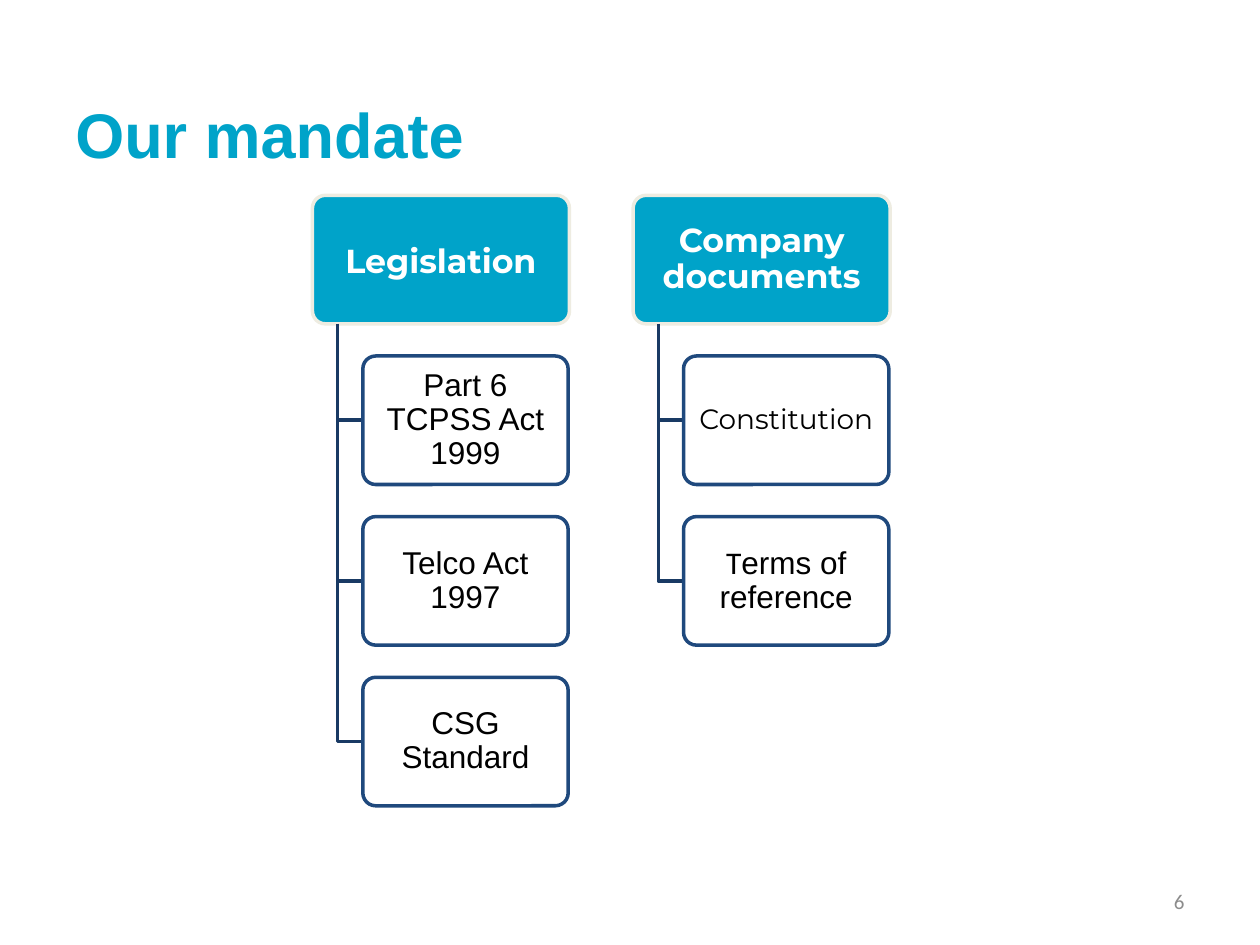
"""Build the mandate slide with two columns of linked boxes."""
from pptx import Presentation
from pptx.dml.color import RGBColor
from pptx.enum.shapes import MSO_SHAPE
from pptx.enum.text import MSO_ANCHOR, PP_ALIGN
from pptx.util import Inches, Pt

ROUND = MSO_SHAPE.ROUNDED_RECTANGLE
MIDDLE = MSO_ANCHOR.MIDDLE
LEFT, CENTER, RIGHT = PP_ALIGN.LEFT, PP_ALIGN.CENTER, PP_ALIGN.RIGHT
TEAL = RGBColor(0x00, 0xA3, 0xC9)
CREAM = RGBColor(0xEE, 0xEC, 0xE1)
NAVY = RGBColor(0x1F, 0x49, 0x7D)
DARK = RGBColor(0x19, 0x3A, 0x64)
GRAY = RGBColor(0x8C, 0x8C, 0x8C)
WHITE = RGBColor(0xFF, 0xFF, 0xFF)
BLACK = RGBColor(0x00, 0x00, 0x00)

TITLE = [("Our mandate", "Arial", 36)]
NUMBER = [("6", "Calibri", 12)]
COLUMNS = [
    ([("Legislation", "Montserrat", 19)], 0.11, [
        [("Part 6 TCPSS Act 1999", "Arial", 18)],
        [("Telco Act 1997", "Arial", 18)],
        [("CSG Standard", "Arial", 18)],
    ]),
    ([("Company documents", "Montserrat", 19)], 0.06, [
        [("Constitution", "Montserrat", 16)],
        [("T", "Calibri", 18), ("erms of reference", "Arial", 18)],
    ]),
]
X, Y = 2.48, 1.55
STEP_X, STEP_Y = 2.545, 1.275
HEAD_W, ITEM_W, BOX_H = 2.04, 1.63, 1.02
STEM, INDENT = 0.2, 0.4


def write(shape, runs, color, align, bold=False):
    frame = shape.text_frame
    frame.word_wrap = True
    frame.vertical_anchor = MIDDLE
    para = frame.paragraphs[0]
    para.alignment = align
    for text, face, size in runs:
        run = para.add_run()
        run.text = text
        font = run.font
        font.name, font.size, font.bold = face, Pt(size), bold
        font.color.rgb = color
    return frame


def label(slide, place, runs, color, align, bold=False):
    box = slide.shapes.add_textbox(*map(Inches, place))
    write(box, runs, color, align, bold)


def card(slide, place, runs, fill, edge, color, bold=False, top=0.06):
    box = slide.shapes.add_shape(ROUND, *map(Inches, place))
    box.adjustments[0] = 0.1
    box.shadow.inherit = False
    box.fill.solid()
    box.fill.fore_color.rgb = fill
    box.line.color.rgb = edge
    box.line.width = Pt(2)
    frame = write(box, runs, color, CENTER, bold)
    frame.margin_left = frame.margin_right = Inches(0.07)
    frame.margin_top, frame.margin_bottom = Inches(top), Inches(0.06)
    frame.paragraphs[0].line_spacing = 0.9


def elbow(slide, x, top, right, y):
    x, top, right, y = map(Inches, (x, top, right, y))
    pen = slide.shapes.build_freeform(x, top)
    pen.add_line_segments([(x, y), (right, y)], close=False)
    link = pen.convert_to_shape()
    link.shadow.inherit = False
    link.fill.background()
    link.line.color.rgb = DARK
    link.line.width = Pt(2)


def main():
    deck = Presentation()
    deck.slide_width, deck.slide_height = Inches(10), Inches(7.5)
    slide = deck.slides.add_slide(deck.slide_layouts[6])
    label(slide, (0.5, 0.15, 9, 1.81), TITLE, TEAL, LEFT, True)
    for col, (head, top, items) in enumerate(COLUMNS):
        x = X + col * STEP_X
        card(slide, (x, Y, HEAD_W, BOX_H), head, TEAL, CREAM, WHITE, True, top)
        for row, runs in enumerate(items, 1):
            y = Y + row * STEP_Y
            elbow(slide, x + STEM, Y + BOX_H, x + INDENT, y + BOX_H / 2)
            card(slide, (x + INDENT, y, ITEM_W, BOX_H), runs, WHITE, NAVY, BLACK)
    label(slide, (7.17, 6.95, 2.33, 0.4), NUMBER, GRAY, RIGHT)
    deck.save("out.pptx")


if __name__ == "__main__":
    main()
